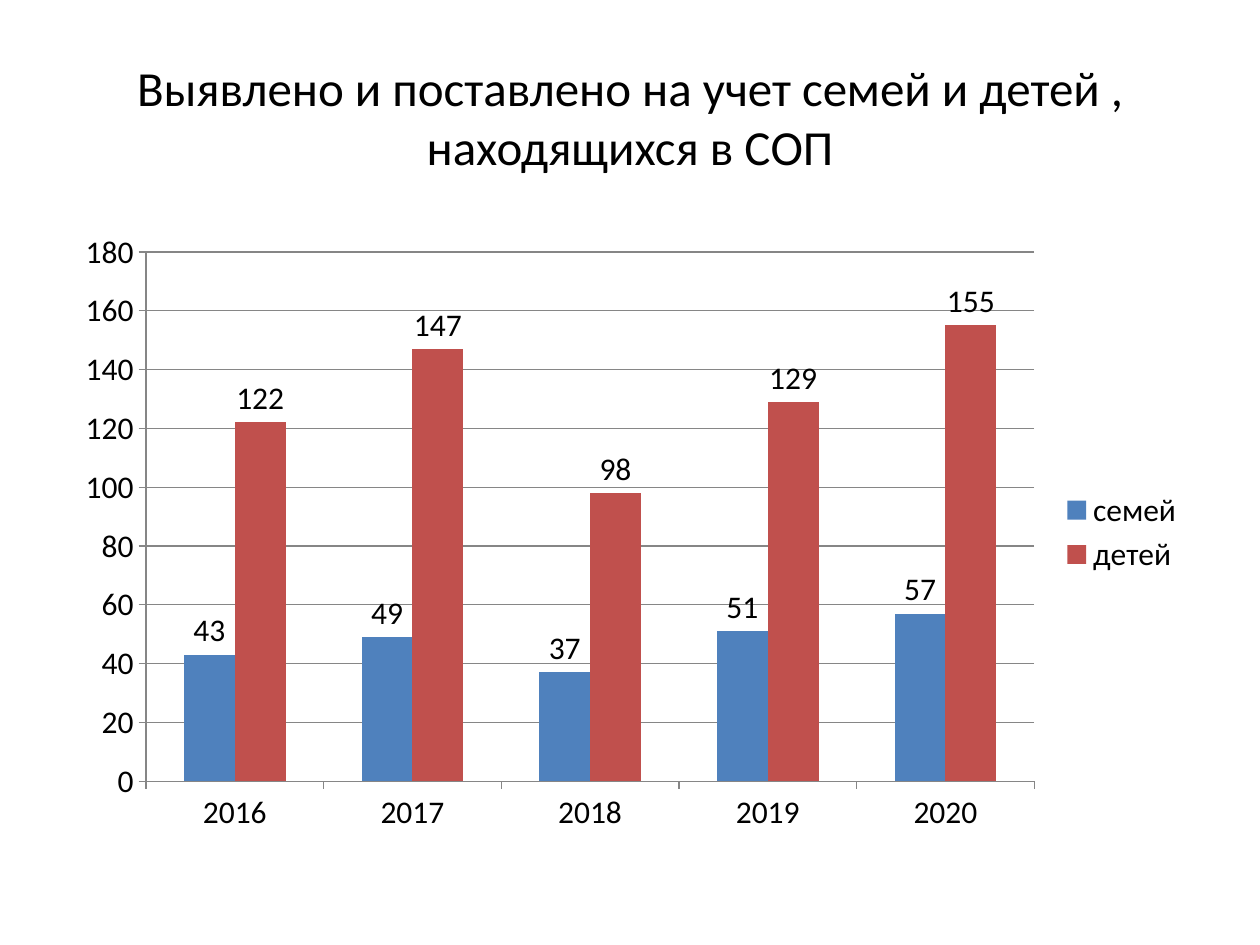
from pptx import Presentation
from pptx.chart.data import CategoryChartData
from pptx.dml.color import RGBColor
from pptx.enum.chart import XL_CHART_TYPE, XL_LABEL_POSITION, XL_LEGEND_POSITION, XL_TICK_MARK
from pptx.enum.text import MSO_ANCHOR, PP_ALIGN
from pptx.util import Pt

SCALE = 9144
BLACK = RGBColor(0x00, 0x00, 0x00)
GRAY = RGBColor(0x86, 0x86, 0x86)
BLUE = RGBColor(0x4F, 0x81, 0xBD)
RED = RGBColor(0xC0, 0x50, 0x4D)

TITLE = "Выявлено и поставлено на учет семей и детей , находящихся в СОП"
YEARS = ["2016", "2017", "2018", "2019", "2020"]
SERIES = [
    ("семей", [43, 49, 37, 51, 57], BLUE),
    ("детей", [122, 147, 98, 129, 155], RED),
]


def assign(target, values):
    for name, value in values.items():
        setattr(target, name, value)


class Painter:
    face = "Calibri"

    def __init__(self, deck):
        self.slide = deck.slides.add_slide(deck.slide_layouts[6])

    def style(self, font, size):
        assign(font, {"name": self.face, "size": Pt(size), "bold": False})
        font.color.rgb = BLACK

    def title(self, box, text, size):
        frame = self.slide.shapes.add_textbox(*(n * SCALE for n in box)).text_frame
        assign(frame, {"word_wrap": True, "vertical_anchor": MSO_ANCHOR.MIDDLE})
        para = frame.paragraphs[0]
        para.alignment = PP_ALIGN.CENTER
        run = para.add_run()
        run.text = text
        self.style(run.font, size)

    def line(self, format):
        format.line.color.rgb = GRAY
        format.line.width = Pt(0.75)

    def columns(self, box, names, series, size):
        data = CategoryChartData()
        data.categories = names
        for name, values, color in series:
            data.add_series(name, values)
        chart = self.slide.shapes.add_chart(
            XL_CHART_TYPE.COLUMN_CLUSTERED, *(n * SCALE for n in box), data
        ).chart
        self.style(chart.font, size)
        assign(chart, {"has_title": False, "has_legend": True})
        assign(chart.legend, {
            "position": XL_LEGEND_POSITION.RIGHT,
            "include_in_layout": False,
        })
        for axis in (chart.category_axis, chart.value_axis):
            assign(axis, {
                "major_tick_mark": XL_TICK_MARK.OUTSIDE,
                "minor_tick_mark": XL_TICK_MARK.NONE,
            })
            self.line(axis.format)
        assign(chart.value_axis, {
            "minimum_scale": 0,
            "maximum_scale": 180,
            "major_unit": 20,
            "has_major_gridlines": True,
        })
        self.line(chart.value_axis.major_gridlines.format)
        plot = chart.plots[0]
        assign(plot, {"gap_width": 150, "overlap": 0, "vary_by_categories": False})
        for bars, (name, values, color) in zip(plot.series, series):
            bars.format.fill.solid()
            bars.format.fill.fore_color.rgb = color
            assign(bars.data_labels, {
                "show_value": True,
                "position": XL_LABEL_POSITION.OUTSIDE_END,
            })
            self.style(bars.data_labels.font, size)


def main():
    deck = Presentation()
    assign(deck, {"slide_width": 1000 * SCALE, "slide_height": 750 * SCALE})
    page = Painter(deck)
    page.title((50, 30, 900, 125), TITLE, 28)
    page.columns((50, 175, 900, 495), YEARS, SERIES, 18)
    deck.save("out.pptx")


if __name__ == "__main__":
    main()
